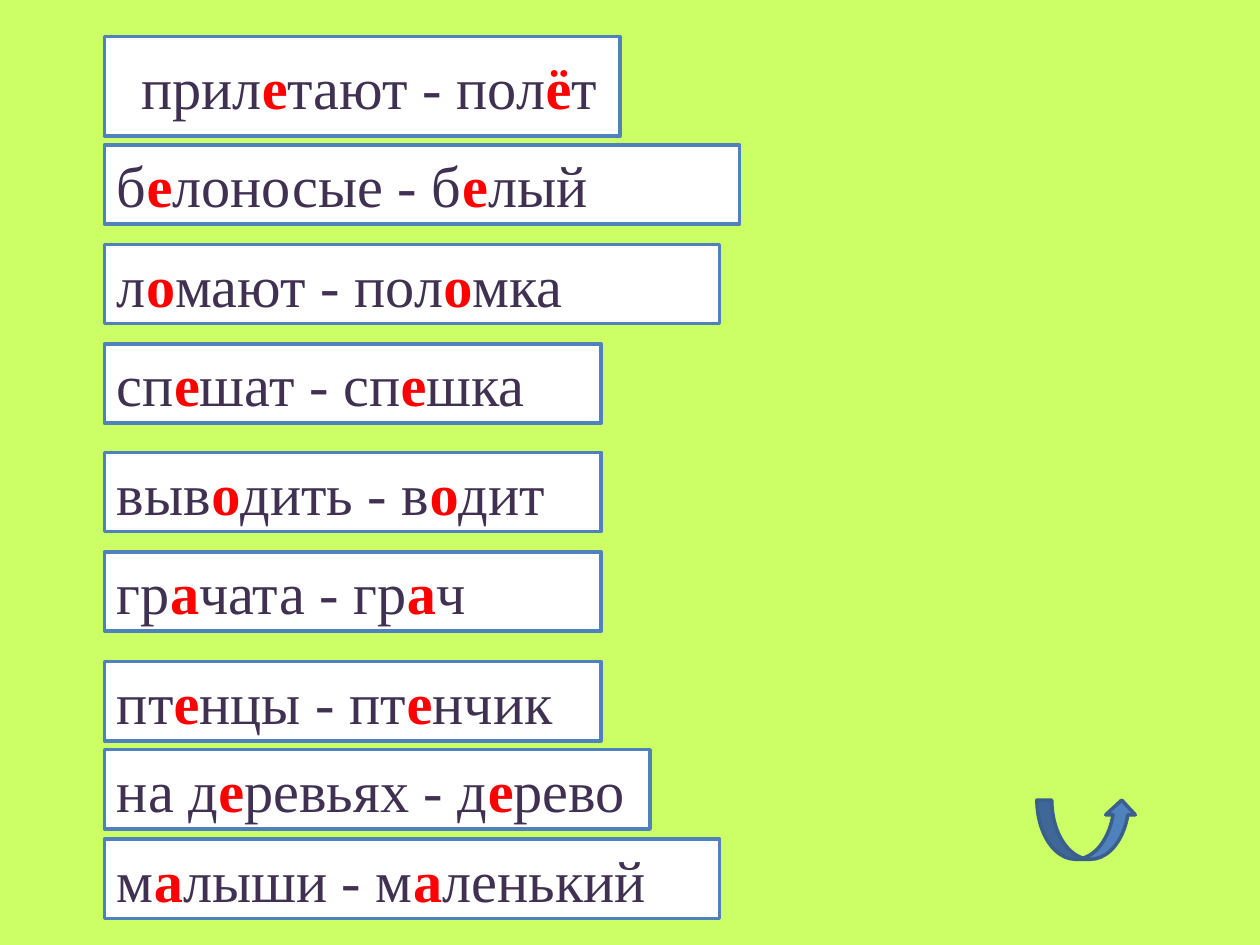
from dataclasses import dataclass

from pptx import Presentation
from pptx.dml.color import RGBColor
from pptx.enum.shapes import MSO_SHAPE
from pptx.enum.text import MSO_ANCHOR, PP_ALIGN
from pptx.util import Inches, Pt

LEFT = 0.83
INK, ACCENT = "403152", "FF0000"


@dataclass
class WordPair:
    """A word and its check word; asterisks enclose the checked vowels."""
    text: str
    top: float
    width: float
    height: float = 0.63
    indent: float = 0


WORD_PAIRS = [
    WordPair("прил*е*тают - пол*ё*т", 0.29, 4.09, height=0.79, indent=0.19),
    WordPair("б*е*лоносые - б*е*лый", 1.15, 5.04),
    WordPair("л*о*мают - пол*о*мка", 1.94, 4.88),
    WordPair("сп*е*шат - сп*е*шка", 2.73, 3.94),
    WordPair("выв*о*дить - в*о*дит", 3.59, 3.94),
    WordPair("гр*а*чата - гр*а*ч", 4.38, 3.94),
    WordPair("пт*е*нцы - пт*е*нчик", 5.25, 3.94),
    WordPair("на д*е*ревьях - д*е*рево", 5.95, 4.33),
    WordPair("м*а*лыши - м*а*ленький", 6.66, 4.88),
]


def paint(color_format, color: str) -> None:
    color_format.rgb = RGBColor.from_string(color)


def add_box(slide, kind, left: float, top: float, width: float, height: float,
            fill: str, line: str):
    shape = slide.shapes.add_shape(
        kind, Inches(left), Inches(top), Inches(width), Inches(height))
    shape.shadow.inherit = False
    shape.fill.solid()
    paint(shape.fill.fore_color, fill)
    paint(shape.line.color, line)
    shape.line.width = Pt(2)
    return shape


def add_word_pair(slide, pair: WordPair) -> None:
    shape = add_box(slide, MSO_SHAPE.RECTANGLE, LEFT, pair.top, pair.width,
                    pair.height, "FFFFFF", "4F81BD")
    frame = shape.text_frame
    frame.word_wrap = True
    frame.vertical_anchor = MSO_ANCHOR.MIDDLE
    frame.margin_left = Inches(0.1 + pair.indent)
    paragraph = frame.paragraphs[0]
    paragraph.alignment = PP_ALIGN.LEFT
    paragraph.font.name = "Times New Roman"
    paragraph.font.size = Pt(33.3)
    # Every second piece is a checked vowel
    for index, piece in enumerate(pair.text.split("*")):
        run = paragraph.add_run()
        run.text = piece
        checked = index % 2 == 1
        run.font.bold = checked
        paint(run.font.color, ACCENT if checked else INK)


def main() -> None:
    presentation = Presentation()
    presentation.slide_width = Inches(10)
    presentation.slide_height = Inches(7.5)
    slide = presentation.slides.add_slide(presentation.slide_layouts[6])

    # Background
    slide.background.fill.solid()
    paint(slide.background.fill.fore_color, "CCFF66")

    # Word pairs
    for pair in WORD_PAIRS:
        add_word_pair(slide, pair)

    # Return arrow
    add_box(slide, MSO_SHAPE.CURVED_UP_ARROW, 8.23, 6.35, 0.79, 0.47,
            "4F81BD", "3A5F8C")

    presentation.save("out.pptx")


if __name__ == "__main__":
    main()
